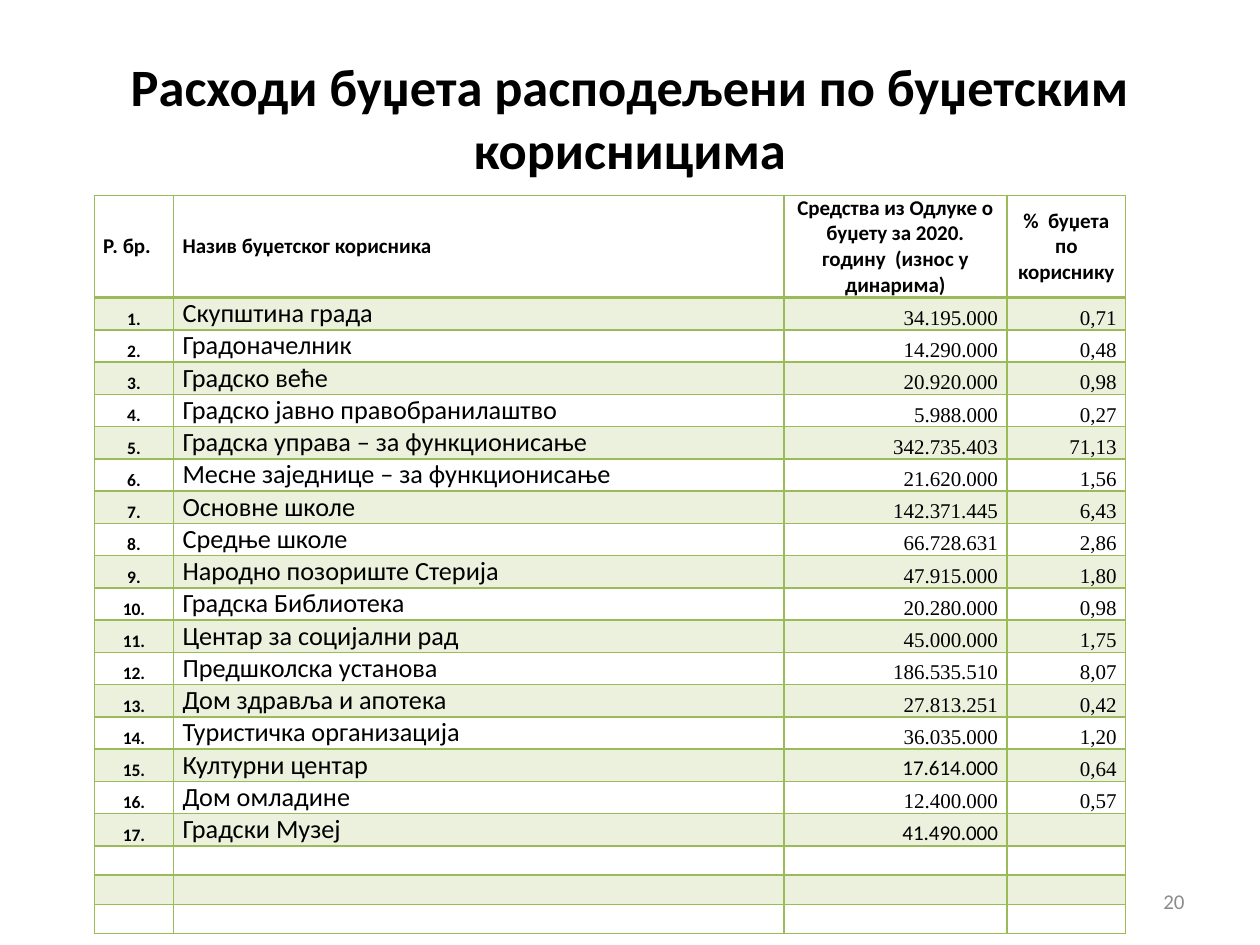
import pptx
import pptx.dml.color
import pptx.enum.text
import pptx.oxml.ns
import pptx.util
from lxml import etree

Cm = pptx.util.Cm
Pt = pptx.util.Pt
ALIGN = pptx.enum.text.PP_ALIGN
ANCHOR = pptx.enum.text.MSO_ANCHOR
qn = pptx.oxml.ns.qn

GREEN = "9BBB59"
SANS = "Calibri"
SERIF = "Times New Roman"

COLUMN_WIDTHS = [1.6, 12.3, 4.5, 2.39]
HEADER_HEIGHT, USER_HEIGHT, EMPTY_HEIGHT = 2.06, 0.65, 0.59
EMPTY_ROWS = 3

HEADINGS = [
    ("Р. бр.", ALIGN.LEFT),
    ("Назив буџетског корисника", ALIGN.LEFT),
    ("Средства из Одлуке о буџету за 2020. годину  (износ у динарима)", ALIGN.CENTER),
    ("%  буџета по кориснику", ALIGN.CENTER),
]
BUDGET_USERS = [
    ("Скупштина града", "34.195.000", "0,71"),
    ("Градоначелник", "14.290.000", "0,48"),
    ("Градско веће", "20.920.000", "0,98"),
    ("Градско јавно правобранилаштво", "5.988.000", "0,27"),
    ("Градска управа – за функционисање", "342.735.403", "71,13"),
    ("Месне заједнице – за функционисање", "21.620.000", "1,56"),
    ("Основне школе", "142.371.445", "6,43"),
    ("Средње школе", "66.728.631", "2,86"),
    ("Народно позориште Стерија", "47.915.000", "1,80"),
    ("Градска Библиотека", "20.280.000", "0,98"),
    ("Центар за социјални рад", "45.000.000", "1,75"),
    ("Предшколска установа", "186.535.510", "8,07"),
    ("Дом здравља и апотека", "27.813.251", "0,42"),
    ("Туристичка организација", "36.035.000", "1,20"),
    ("Културни центар", "17.614.000", "0,64"),
    ("Дом омладине", "12.400.000", "0,57"),
    ("Градски Музеј", "41.490.000", ""),
]
SANS_AMOUNTS = {15, 17}
FIRST_TOP_ANCHORED = 15


def rgb(hex_color):
    return pptx.dml.color.RGBColor.from_string(hex_color)


def write(frame, text, size, align, font=SANS, bold=False, color="000000"):
    paragraph = frame.paragraphs[0]
    paragraph.text = text
    paragraph.alignment = align
    for run in paragraph.runs:
        run.font.name = font
        run.font.size = Pt(size)
        run.font.bold = bold
        run.font.color.rgb = rgb(color)
    if not text:
        # An empty cell would otherwise grow to the default 18 pt line
        etree.SubElement(paragraph._p, qn("a:endParaRPr"), sz=str(size * 100))


def add_text(slide, left, top, width, height, text, size, align, **style):
    frame = slide.shapes.add_textbox(Cm(left), Cm(top), Cm(width), Cm(height)).text_frame
    frame.word_wrap = True
    frame.vertical_anchor = ANCHOR.MIDDLE
    write(frame, text, size, align, **style)


def set_borders(cell, top=1, bottom=1):
    properties = cell._tc.get_or_add_tcPr()
    for tag, width in (("lnL", 1), ("lnR", 1), ("lnT", top), ("lnB", bottom)):
        line = etree.SubElement(properties, qn(f"a:{tag}"), w=str(Pt(width)))
        fill = etree.SubElement(line, qn("a:solidFill"))
        etree.SubElement(fill, qn("a:srgbClr"), val=GREEN)


def shade(cell, tinted):
    if not tinted:
        cell.fill.background()
        return
    cell.fill.solid()
    cell.fill.fore_color.rgb = rgb(GREEN)
    color = cell._tc.tcPr.find(qn("a:solidFill")).find(qn("a:srgbClr"))
    etree.SubElement(color, qn("a:alpha"), val="20000")


def format_cells(table):
    """Apply borders, banding and insets to the whole table."""
    for row_index, row in enumerate(table.rows):
        for cell in row.cells:
            cell.margin_left = cell.margin_right = Cm(0.18)
            cell.margin_top = cell.margin_bottom = 0
            cell.vertical_anchor = ANCHOR.BOTTOM if row_index else ANCHOR.MIDDLE
            set_borders(cell, top=2 if row_index == 1 else 1,
                        bottom=2 if row_index == 0 else 1)
            shade(cell, row_index % 2 == 1)


def fill_user_row(table, number, name, amount, share):
    number_cell, name_cell, amount_cell, share_cell = table.rows[number].cells
    write(number_cell.text_frame, f"{number}.", 10, ALIGN.CENTER, bold=True)
    write(name_cell.text_frame, name, 15, ALIGN.LEFT)
    if number >= FIRST_TOP_ANCHORED:
        name_cell.vertical_anchor = ANCHOR.TOP
    amount_font = SANS if number in SANS_AMOUNTS else SERIF
    write(amount_cell.text_frame, amount, 12, ALIGN.RIGHT, font=amount_font)
    write(share_cell.text_frame, share, 12, ALIGN.RIGHT, font=SERIF)


def add_budget_table(slide):
    heights = ([HEADER_HEIGHT] + [USER_HEIGHT] * len(BUDGET_USERS)
               + [EMPTY_HEIGHT] * EMPTY_ROWS)
    table = slide.shapes.add_table(
        len(heights), len(COLUMN_WIDTHS), Cm(1.9), Cm(3.94),
        Cm(sum(COLUMN_WIDTHS)), Cm(sum(heights))).table
    table.first_row = table.horz_banding = False
    for column, width in zip(table.columns, COLUMN_WIDTHS):
        column.width = Cm(width)
    for row, height in zip(table.rows, heights):
        row.height = Cm(height)
    format_cells(table)

    for cell, (heading, align) in zip(table.rows[0].cells, HEADINGS):
        write(cell.text_frame, heading, 12, align, bold=True)
    for number, user in enumerate(BUDGET_USERS, start=1):
        fill_user_row(table, number, *user)
    for row_index in range(len(BUDGET_USERS) + 1, len(heights)):
        for cell in table.rows[row_index].cells:
            write(cell.text_frame, "", 12, ALIGN.LEFT)


def main():
    presentation = pptx.Presentation()
    presentation.slide_width = Cm(25.4)
    presentation.slide_height = Cm(19.05)
    slide = presentation.slides.add_slide(presentation.slide_layouts[6])
    add_text(slide, 1.27, 0.76, 22.86, 3.18,
             "Расходи буџета расподељени по буџетским корисницима",
             30, ALIGN.CENTER, bold=True)
    add_budget_table(slide)
    add_text(slide, 18.2, 17.66, 5.93, 1.01, "20", 12, ALIGN.RIGHT, color="8C8C8C")
    presentation.save("out.pptx")


if __name__ == "__main__":
    main()
